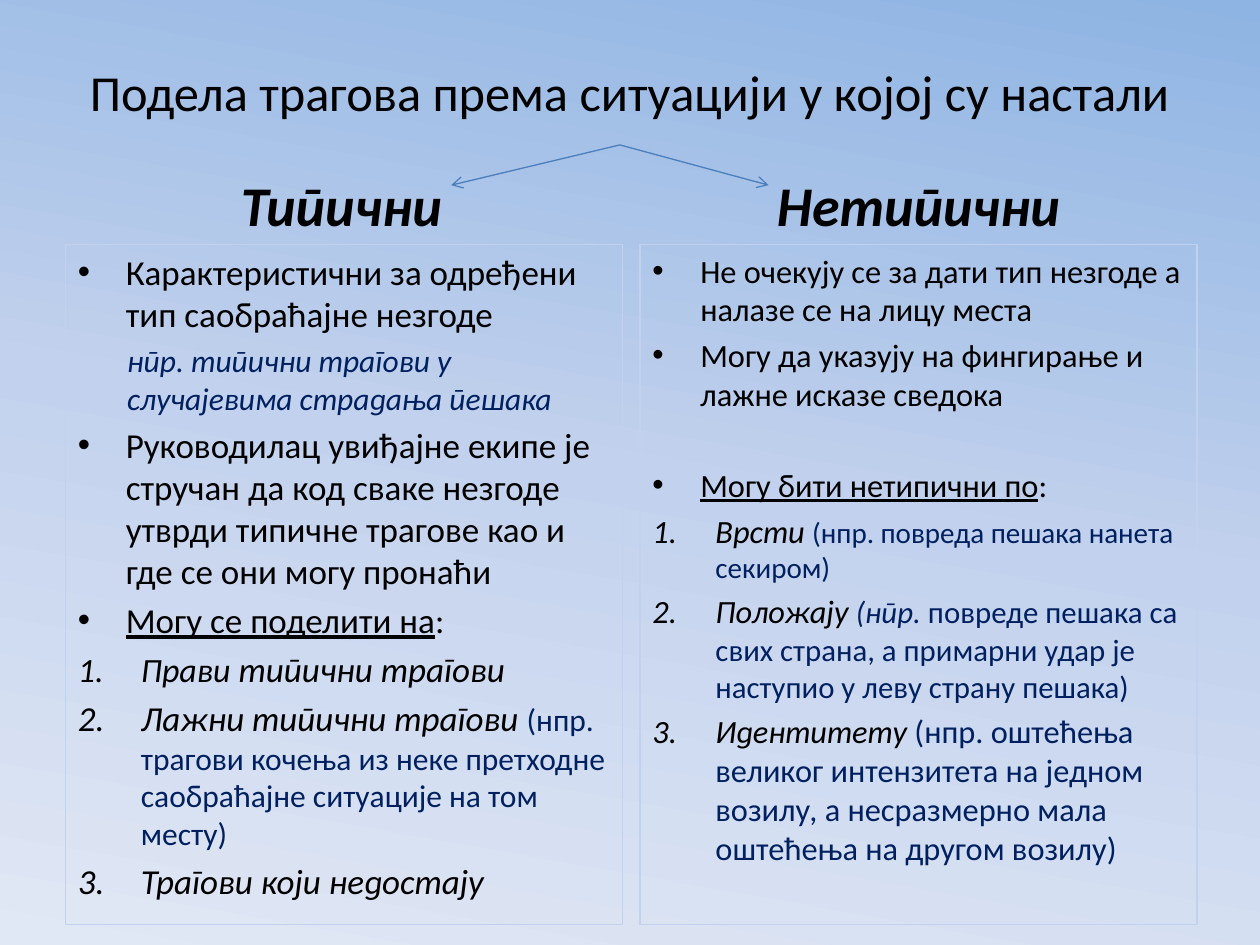
from dataclasses import dataclass, field

import lxml.etree
import pptx
import pptx.dml.color
import pptx.enum.dml
import pptx.enum.shapes
import pptx.enum.text
import pptx.oxml
import pptx.oxml.ns
import pptx.util

Inches, Pt = pptx.util.Inches, pptx.util.Pt
Align, Anchor = pptx.enum.text.PP_ALIGN, pptx.enum.text.MSO_ANCHOR
BLACK, NAVY, BLUE, PALE = "000000", "002060", "4B7EBC", "C2D1ED"
LANG = "sr-Cyrl-RS"
WIDE = 4.42


@dataclass
class Run:
    text: str
    size: float
    color: str = BLACK
    style: dict = field(default_factory=dict)


@dataclass
class Para:
    runs: list[Run]
    mark: str = "dot"  # dot, num or none
    gap: float = 4


@dataclass
class Column:
    left: float
    edge: float
    head: str
    paras: list[Para]


ITAL, UNDER = {"italic": True}, {"underline": True}
# Mark kind: left margin, first-line indent, bullet element
MARKS = {
    "dot": (0.38, -0.38, {"buFont": {"typeface": "Arial"}, "buChar": {"char": "•"}}),
    "num": (0.5, -0.5, {"buFont": {"typeface": "+mj-lt"},
                        "buAutoNum": {"type": "arabicPeriod"}}),
    "none": (0.39, 0, {"buNone": {}}),
}

COLUMNS = [
    Column(0.5, 0.52, "Типични", [
        Para([Run("Карактеристични за одређени тип саобраћајне незгоде", 20)]),
        Para([Run("нпр. типични трагови у случајевима страдања пешака", 18, NAVY, ITAL)],
             "none", 3.6),
        Para([Run("Руководилац увиђајне екипе је стручан да код сваке незгоде "
                  "утврди типичне трагове као и где се они могу пронаћи", 20)]),
        Para([Run("Могу се поделити на", 20, style=UNDER), Run(":", 20)]),
        Para([Run("Прави", 19.4, style=ITAL),
              Run(" типични трагови", 20, style=ITAL)], "num"),
        Para([Run("Лажни типични трагови ", 20, style=ITAL),
              Run("(нпр. трагови кочења из неке претходне саобраћајне ситуације "
                  "на том месту)", 18, NAVY)], "num"),
        Para([Run("Трагови који недостају", 20, style=ITAL)], "num"),
    ]),
    Column(5.08, 5.08, "Нетипични", [
        Para([Run("Не очекују се за дати тип незгоде а налазе се на лицу места", 18.5)]),
        Para([Run("Могу да указују на фингирање и лажне исказе сведока", 18.5)]),
        Para([Run("Могу бити нетипични по", 18.5, style=UNDER), Run(":", 18.5)], gap=29.5),
        Para([Run("Врсти ", 18.5, style=ITAL),
              Run("(нпр. повреда пешака нанета секиром)", 16.6, NAVY)], "num"),
        Para([Run("Положају ", 18.5, style=ITAL), Run("(нпр. ", 17.6, NAVY, ITAL),
              Run("повреде пешака са свих страна, а примарни удар је наступио у "
                  "леву страну пешака)", 17.6, NAVY)], "num"),
        Para([Run("Идентитету ", 18.5, style=ITAL),
              Run("(нпр. оштећења великог интензитета на једном возилу, а "
                  "несразмерно мала оштећења на другом возилу)", 18.5, NAVY)], "num"),
    ]),
]


def paint(target, color: str) -> None:
    """Set a colour format from a hex string."""
    target.rgb = pptx.dml.color.RGBColor.from_string(color)


def add(parent, tag: str, **attrs: str):
    return lxml.etree.SubElement(parent, pptx.oxml.ns.qn("a:" + tag), attrs)


def write(para, run: Run) -> None:
    item = para.add_run()
    item.text = run.text
    style = {"name": "Calibri", "size": Pt(run.size), **run.style}
    for name, value in style.items():
        setattr(item.font, name, value)
    paint(item.font.color, run.color)
    item.font._element.set("lang", LANG)


def setup(frame, anchor) -> None:
    style = {"word_wrap": True, "vertical_anchor": anchor,
             "auto_size": pptx.enum.text.MSO_AUTO_SIZE.NONE}
    for name, value in style.items():
        setattr(frame, name, value)


def shade(slide) -> None:
    """Fill the background with a three-stop gradient."""
    fill = slide.background.fill
    fill.gradient()
    fill.gradient_angle = 260
    stops = slide._element.find(".//" + pptx.oxml.ns.qn("a:gsLst"))
    for stop in list(stops):
        stops.remove(stop)
    for place, color in ((0, "8EB4E3"), (50, PALE), (100, "E1E8F5")):
        add(add(stops, "gs", pos=str(place * 1000)), "srgbClr", val=color)


def draw_head(slide, col: Column) -> None:
    box = slide.shapes.add_textbox(Inches(col.left), Inches(1.31), Inches(WIDE), Inches(0.63))
    setup(box.text_frame, Anchor.BOTTOM)
    para = box.text_frame.paragraphs[0]
    para.alignment = Align.CENTER
    para.space_before = Pt(6.4)
    write(para, Run(col.head, 32, style={"bold": True, "italic": True}))


def draw_body(slide, col: Column) -> None:
    box = slide.shapes.add_textbox(Inches(col.edge), Inches(1.94), Inches(WIDE), Inches(5.4))
    paint(box.line.color, PALE)
    box.line.width = Pt(0.75)
    frame = box.text_frame
    setup(frame, Anchor.TOP)
    for i, spec_para in enumerate(col.paras):
        para = frame.add_paragraph() if i else frame.paragraphs[0]
        para.space_before = Pt(spec_para.gap)
        left, first, parts = MARKS[spec_para.mark]
        props = para._p.get_or_add_pPr()
        props.set("marL", str(Inches(left)))
        props.set("indent", str(Inches(first)))
        for tag, attrs in parts.items():
            add(props, tag, **attrs)
        for run in spec_para.runs:
            write(para, run)


def draw_arrow(slide, end: tuple[float, float]) -> None:
    line = slide.shapes.add_connector(
        pptx.enum.shapes.MSO_CONNECTOR.STRAIGHT,
        Inches(4.92), Inches(1.15), Inches(end[0]), Inches(end[1]))
    paint(line.line.color, BLUE)
    line.line.width = Pt(0.75)
    add(line.line._get_or_add_ln(), "tailEnd", type="arrow")
    add(line._element.spPr, "effectLst")


def main() -> None:
    deck = pptx.Presentation()
    deck.slide_width, deck.slide_height = Inches(10), Inches(7.5)
    slide = deck.slides.add_slide(deck.slide_layouts[5])
    shade(slide)

    # Title
    title = slide.shapes.title
    title.left, title.top = Inches(0.5), Inches(0.3)
    title.width, title.height = Inches(9), Inches(0.85)
    setup(title.text_frame, Anchor.MIDDLE)
    para = title.text_frame.paragraphs[0]
    para.alignment = Align.CENTER
    write(para, Run("Подела трагова према ситуацији у којој су настали", 28.8))

    # Two columns
    for col in COLUMNS:
        draw_head(slide, col)
        draw_body(slide, col)

    # Arrows from the title to the headings
    for end in ((3.58, 1.47), (6.1, 1.47)):
        draw_arrow(slide, end)

    deck.save("out.pptx")


if __name__ == "__main__":
    main()
